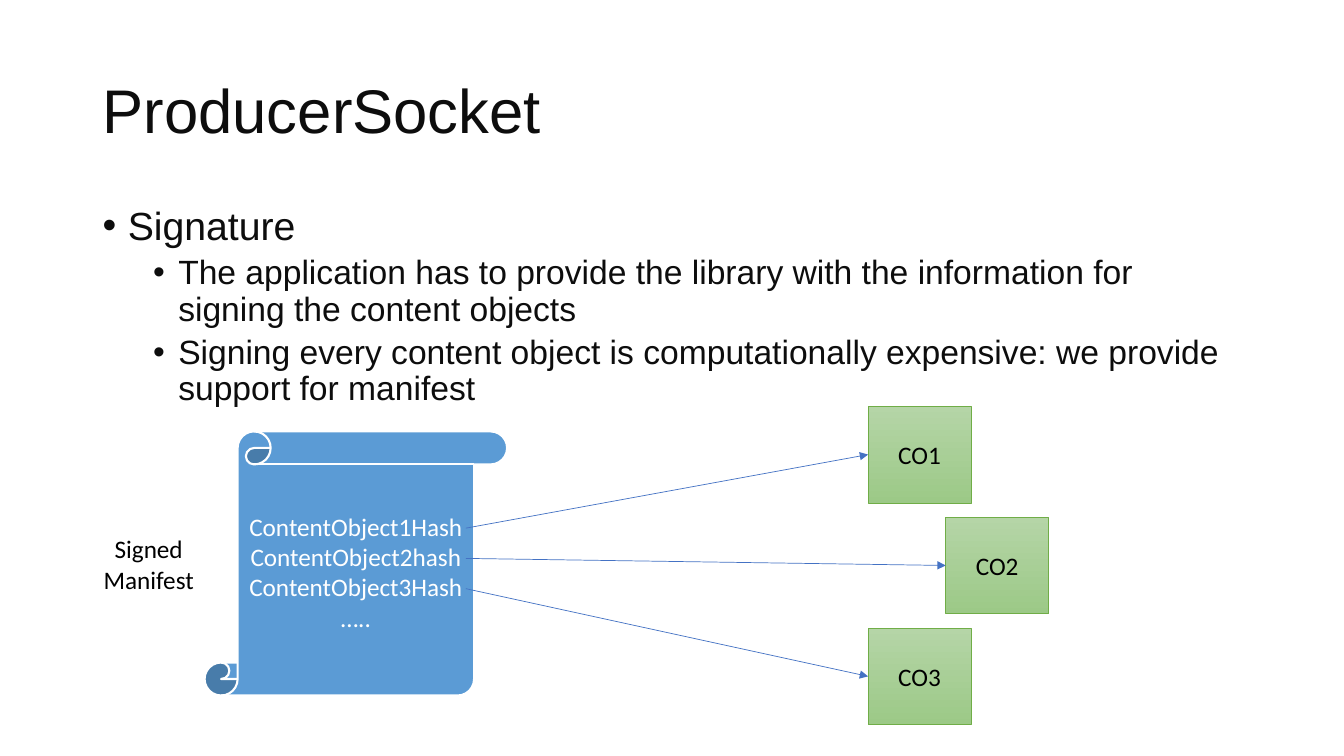
from lxml import etree
from pptx import Presentation
from pptx import util as u
from pptx.dml.color import RGBColor
from pptx.enum import shapes, text
from pptx.oxml.ns import qn

INK = RGBColor(0x0D, 0x0D, 0x0D)
BLACK = RGBColor(0x00, 0x00, 0x00)
WHITE = RGBColor(0xFF, 0xFF, 0xFF)
SCROLL_BLUE = RGBColor(0x5B, 0x9B, 0xD5)
ARROW_BLUE = RGBColor(0x44, 0x72, 0xC4)
GREEN_LINE = RGBColor(0x70, 0xAD, 0x47)
GREEN_TOP = RGBColor(0xB5, 0xD5, 0xA7)
GREEN_BOTTOM = RGBColor(0x9C, 0xC9, 0x87)


def set_font(paragraph, name, size, color):
    paragraph.font.name = name
    paragraph.font.size = u.Pt(size)
    paragraph.font.color.rgb = color


def add_label(shape, label, color):
    shape.text_frame.vertical_anchor = text.MSO_ANCHOR.MIDDLE
    paragraph = shape.text_frame.paragraphs[0]
    paragraph.text = label
    paragraph.alignment = text.PP_ALIGN.CENTER
    set_font(paragraph, "Calibri", 18, color)


presentation = Presentation()
presentation.slide_width = u.Inches(13.33)
presentation.slide_height = u.Inches(7.5)
slide = presentation.slides.add_slide(presentation.slide_layouts[6])

title = slide.shapes.add_textbox(u.Inches(0.92), u.Inches(0.4), u.Inches(10.35), u.Inches(1.45))
title.text_frame.word_wrap = True
title.text_frame.vertical_anchor = text.MSO_ANCHOR.MIDDLE
paragraph = title.text_frame.paragraphs[0]
paragraph.text = "ProducerSocket"
paragraph.line_spacing = 0.9
set_font(paragraph, "Arial", 44, INK)

body = slide.shapes.add_textbox(u.Inches(0.92), u.Inches(2), u.Inches(11.5), u.Inches(4.36))
body.text_frame.word_wrap = True
bullets = [
    (0, "Signature"),
    (1, "The application has to provide the library with the information for signing the content objects"),
    (1, "Signing every content object is computationally expensive: we provide support for manifest"),
]
for index, (level, sentence) in enumerate(bullets):
    paragraph = body.text_frame.add_paragraph() if index else body.text_frame.paragraphs[0]
    paragraph.text = sentence
    paragraph.level = level
    paragraph.line_spacing = 0.9
    paragraph.space_before = u.Pt(5 if index else 0)
    properties = paragraph._p.get_or_add_pPr()
    properties.set("marL", str(u.Inches(0.25 + 0.5 * level)))
    properties.set("indent", str(u.Inches(-0.25)))
    etree.SubElement(properties, qn("a:buFont"), typeface="Arial")
    etree.SubElement(properties, qn("a:buChar"), char="•")
    set_font(paragraph, "Arial", 28 - 4 * level, INK)

scroll = slide.shapes.add_shape(
    shapes.MSO_SHAPE.VERTICAL_SCROLL, u.Inches(2.03), u.Inches(4.28), u.Inches(3), u.Inches(2.62))
scroll.shadow.inherit = False
scroll.fill.solid()
scroll.fill.fore_color.rgb = SCROLL_BLUE
scroll.line.color.rgb = WHITE
scroll.line.width = u.Pt(1.5)
add_label(scroll, "ContentObject1Hash\nContentObject2hash\nContentObject3Hash\n…..", WHITE)

caption = slide.shapes.add_textbox(u.Inches(0.92), u.Inches(5.24), u.Inches(1.11), u.Inches(0.71))
caption.text_frame.word_wrap = False
add_label(caption, "Signed\nManifest", BLACK)

for index, left in enumerate([8.61, 9.38, 8.61]):
    box = slide.shapes.add_shape(
        shapes.MSO_SHAPE.RECTANGLE,
        u.Inches(left), u.Inches(4.03 + 1.1 * index), u.Inches(1.02), u.Inches(0.96))
    box.shadow.inherit = False
    box.fill.gradient()
    box.fill.gradient_angle = 270
    for stop, color in zip(box.fill.gradient_stops, [GREEN_TOP, GREEN_BOTTOM]):
        stop.color.rgb = color
    box.line.color.rgb = GREEN_LINE
    box.line.width = u.Pt(0.5)
    add_label(box, f"CO{index + 1}", BLACK)

    start_y = u.Inches(5.24 + 0.3 * index)
    arrow = slide.shapes.add_connector(
        shapes.MSO_CONNECTOR.STRAIGHT, u.Inches(4.62), start_y, box.left, start_y)
    arrow.end_connect(box, 1)
    arrow.line.color.rgb = ARROW_BLUE
    arrow.line.width = u.Pt(0.5)
    etree.SubElement(arrow.line._get_or_add_ln(), qn("a:tailEnd"), type="triangle")
    etree.SubElement(arrow._element.spPr, qn("a:effectLst"))

presentation.save("out.pptx")
